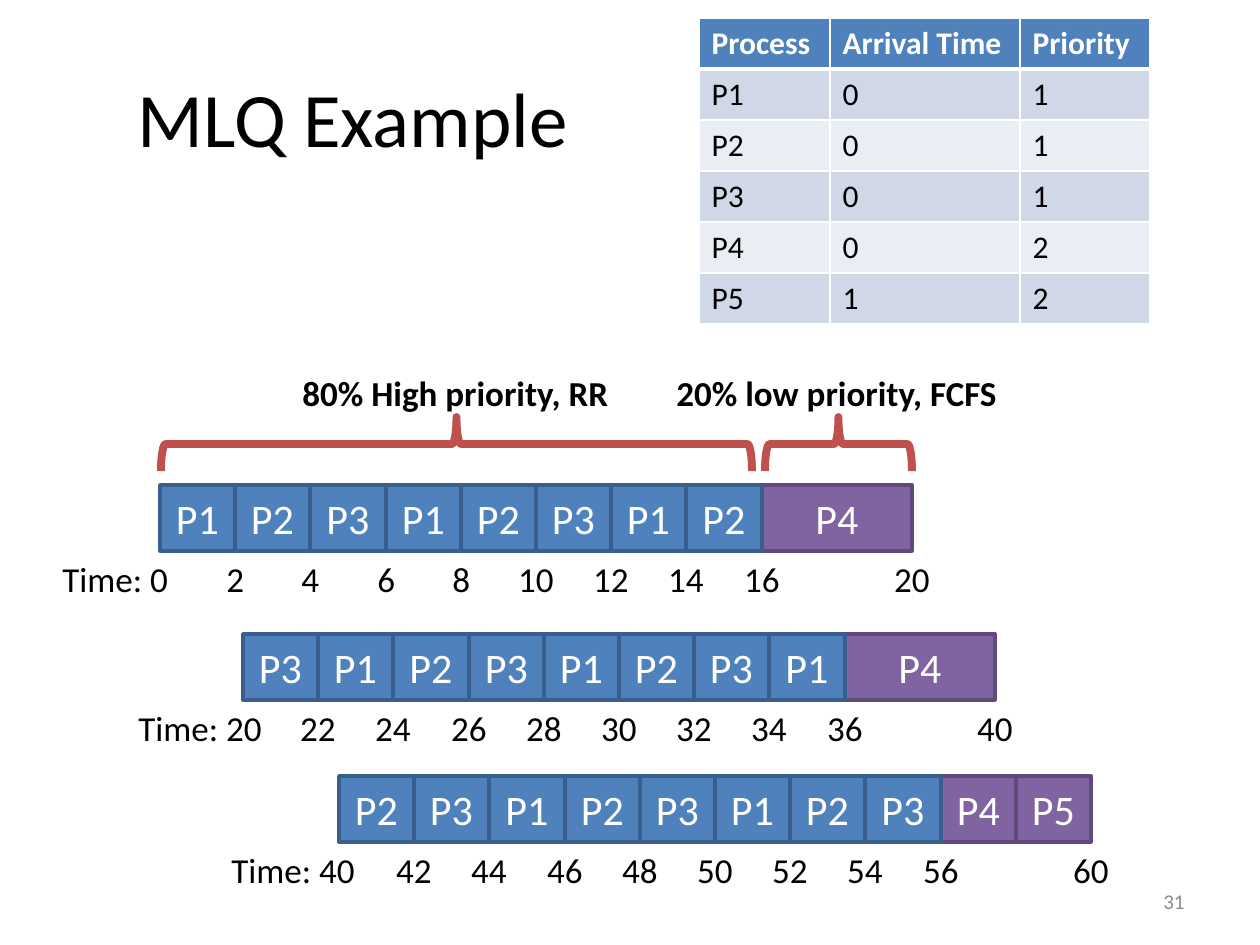
from dataclasses import dataclass

from pptx import Presentation
from pptx.dml.color import RGBColor
from pptx.enum.shapes import MSO_SHAPE
from pptx.enum.text import MSO_ANCHOR, PP_ALIGN
from pptx.oxml import parse_xml
from pptx.oxml.ns import nsdecls
from pptx.util import Emu, Pt

RECT, BRACE = MSO_SHAPE.RECTANGLE, MSO_SHAPE.RIGHT_BRACE
LEFT, CENTER, RIGHT = PP_ALIGN.LEFT, PP_ALIGN.CENTER, PP_ALIGN.RIGHT
TOP, MIDDLE = MSO_ANCHOR.TOP, MSO_ANCHOR.MIDDLE
FONT = "Calibri"
BLACK, WHITE, GREY, RED = "000000", "FFFFFF", "8C8C8C", "C0504D"
BLUE, PURPLE = "4F81BD", "8064A2"
OUTLINE = {BLUE: "3A5F8C", PURPLE: "604A7B"}
BANDS = ("D0D8E8", "E9EDF4")

PX_PER_INCH = 126
ROW_WIDTH, ROW_SLOTS, SLOT_TIME = 752, 10, 2
BAR_HEIGHT, LABEL_HEIGHT = 66, 55

PROCESSES = [
    ("Process", "Arrival Time", "Priority"),
    ("P1", "0", "1"),
    ("P2", "0", "1"),
    ("P3", "0", "1"),
    ("P4", "0", "2"),
    ("P5", "1", "2"),
]
COLUMN_WIDTHS = (131, 190, 130)
TABLE_ROW_HEIGHT = 51


@dataclass
class Timeline:
    left: int
    top: int
    label_left: int
    start: int
    high: list[str]
    low: list[str]


@dataclass
class Share:
    text: str
    text_left: int
    text_width: int
    brace_left: int
    brace_width: int


TIMELINES = [
    Timeline(160, 485, 50, 0, "P1 P2 P3 P1 P2 P3 P1 P2".split(), ["P4"]),
    Timeline(243, 634, 126, 20, "P3 P1 P2 P3 P1 P2 P3 P1".split(), ["P4"]),
    Timeline(339, 776, 219, 40, "P2 P3 P1 P2 P3 P1 P2 P3".split(), ["P4", "P5"]),
]
SHARES = [
    Share("80% High priority, RR", 290, 334, 161, 591),
    Share("20% low priority, FCFS", 664, 348, 765, 147),
]


def px(value: float) -> Emu:
    return Emu(round(value * 914400 / PX_PER_INCH))


def box(*lengths: float) -> list[Emu]:
    return [px(v) for v in lengths]


def rgb(value: str) -> RGBColor:
    return RGBColor.from_string(value)


def write(tf, text: str, size: int, color: str = BLACK, align=LEFT, bold: bool = False) -> None:
    p = tf.paragraphs[0]
    p.alignment = align
    r = p.add_run()
    r.text = text
    for name, value in {"name": FONT, "size": Pt(size), "bold": bold}.items():
        setattr(r.font, name, value)
    r.font.color.rgb = rgb(color)


def add_text(slide, area, text: str, size: int, anchor=TOP, wrap: bool = False, **style) -> None:
    tf = slide.shapes.add_textbox(*box(*area)).text_frame
    for name, value in {"word_wrap": wrap, "vertical_anchor": anchor}.items():
        setattr(tf, name, value)
    write(tf, text, size, **style)


def add_border(cell, sides: dict[str, int]) -> None:
    """Give a cell white borders; sides maps L, R, T, B (in this order) to points."""
    tc_pr = cell._tc.get_or_add_tcPr()
    for i, (side, width) in enumerate(sides.items()):
        tc_pr.insert(i, parse_xml(
            f'<a:ln{side} {nsdecls("a")} w="{Pt(width)}"><a:solidFill>'
            f'<a:srgbClr val="{WHITE}"/></a:solidFill></a:ln{side}>'))


def add_process_table(slide) -> None:
    area = box(699, 18, sum(COLUMN_WIDTHS), TABLE_ROW_HEIGHT * len(PROCESSES))
    table = slide.shapes.add_table(len(PROCESSES), len(COLUMN_WIDTHS), *area).table
    for column, width in zip(table.columns, COLUMN_WIDTHS):
        column.width = px(width)
    for i, values in enumerate(PROCESSES):
        table.rows[i].height = px(TABLE_ROW_HEIGHT)
        header = i == 0
        for j, value in enumerate(values):
            cell = table.cell(i, j)
            cell.fill.solid()
            cell.fill.fore_color.rgb = rgb(BLUE if header else BANDS[(i - 1) % 2])
            add_border(cell, {"L": 1, "R": 1, "T": 3 if i == 1 else 1, "B": 3 if header else 1})
            write(cell.text_frame, value, 18, WHITE if header else BLACK, bold=header)


def add_bar(slide, left: int, right: int, top: int, text: str, color: str) -> None:
    sp = slide.shapes.add_shape(RECT, *box(left, top, right - left, BAR_HEIGHT))
    sp.shadow.inherit = False
    sp.fill.solid()
    sp.fill.fore_color.rgb = rgb(color)
    sp.line.color.rgb = rgb(OUTLINE[color])
    sp.line.width = Pt(2)
    sp.text_frame.vertical_anchor = MIDDLE
    write(sp.text_frame, text, 24, WHITE, CENTER)


def add_timeline(slide, row: Timeline) -> None:
    edges = [row.left + round(ROW_WIDTH * i / ROW_SLOTS) for i in range(ROW_SLOTS + 1)]
    split = len(row.high)
    span = (ROW_SLOTS - split) // len(row.low)
    for i, name in enumerate(row.low):
        first = split + i * span
        add_bar(slide, edges[first], edges[first + span], row.top, name, PURPLE)
    for i, name in enumerate(row.high):
        add_bar(slide, edges[i], edges[i + 1], row.top, name, BLUE)

    label_top = row.top + BAR_HEIGHT
    start_width = 132 if row.start < 10 else 150
    add_text(slide, (row.label_left, label_top, start_width, LABEL_HEIGHT),
             f"Time: {row.start}", 20)
    for i in [*range(1, split + 1), ROW_SLOTS]:
        time = row.start + i * SLOT_TIME
        width = 42 if time < 10 else 62
        add_text(slide, (edges[i] - width // 2, label_top, width, LABEL_HEIGHT),
                 str(time), 20, align=CENTER)


def add_share(slide, share: Share) -> None:
    """Draw a brace pointing up at its heading."""
    top, depth = 417, 54
    shift = (share.brace_width - depth) / 2
    sp = slide.shapes.add_shape(
        BRACE, *box(share.brace_left + shift, top - shift, depth, share.brace_width))
    sp.rotation = 270
    sp.shadow.inherit = False
    sp.fill.background()
    sp.line.color.rgb = rgb(RED)
    sp.line.width = Pt(4.5)
    add_text(slide, (share.text_left, 365, share.text_width, LABEL_HEIGHT),
             share.text, 20, bold=True)


def main() -> None:
    prs = Presentation()
    prs.slide_width, prs.slide_height = box(1260, 945)
    slide = prs.slides.add_slide(prs.slide_layouts[6])
    add_text(slide, (63, 38, 580, 157), "MLQ Example", 44, MIDDLE, True, align=CENTER)
    add_text(slide, (903, 876, 294, 50), "31", 12, MIDDLE, True, color=GREY, align=RIGHT)
    add_process_table(slide)
    for row in TIMELINES:
        add_timeline(slide, row)
    for share in SHARES:
        add_share(slide, share)
    prs.save("out.pptx")


if __name__ == "__main__":
    main()
